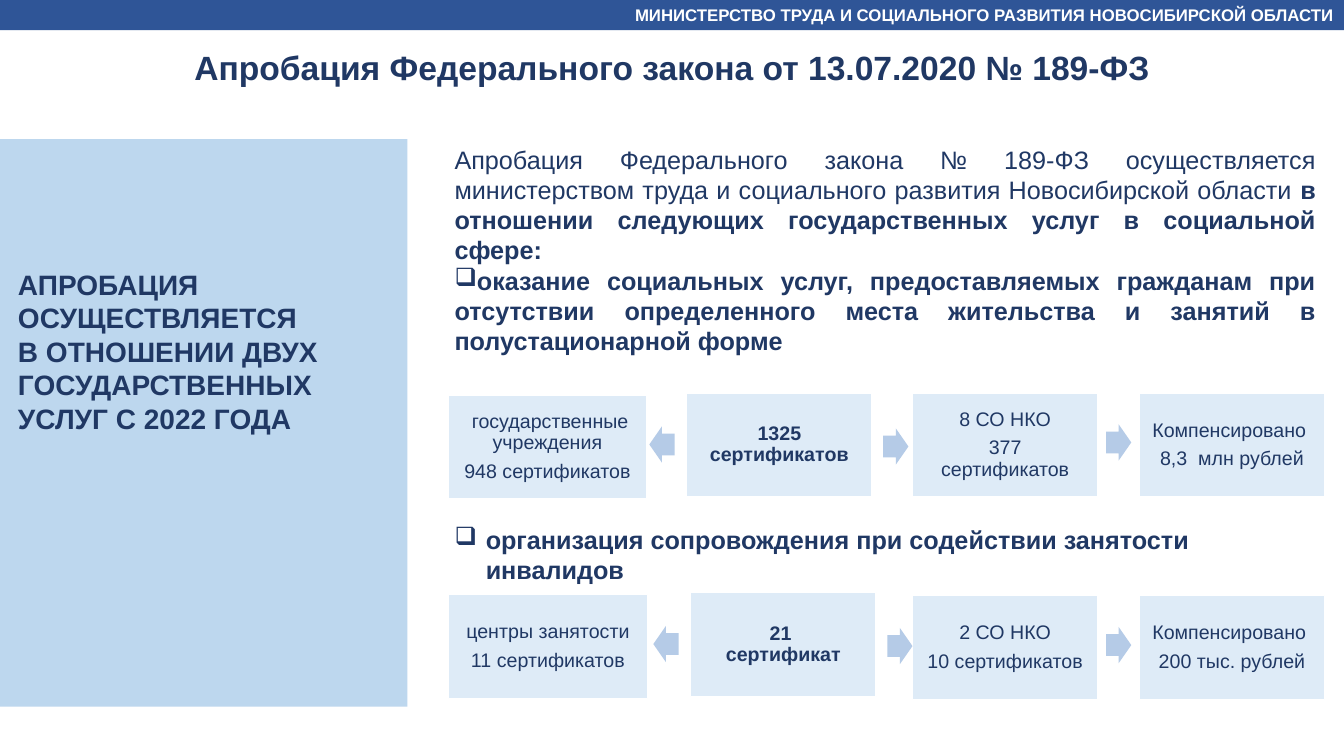
from dataclasses import dataclass

from lxml import etree
from pptx import Presentation
from pptx.dml.color import RGBColor
from pptx.enum.shapes import MSO_SHAPE
from pptx.enum.text import MSO_ANCHOR, MSO_AUTO_SIZE, PP_ALIGN
from pptx.oxml.ns import qn
from pptx.util import Inches, Pt

RECT = MSO_SHAPE.RECTANGLE
RIGHT_ARROW = MSO_SHAPE.RIGHT_ARROW
LEFT_ARROW = MSO_SHAPE.LEFT_ARROW
LEFT, CENTER, RIGHT, JUSTIFY = PP_ALIGN.LEFT, PP_ALIGN.CENTER, PP_ALIGN.RIGHT, PP_ALIGN.JUSTIFY
TOP, MIDDLE = MSO_ANCHOR.TOP, MSO_ANCHOR.MIDDLE
NO_AUTOFIT = MSO_AUTO_SIZE.NONE


@dataclass(frozen=True)
class Theme:
    font: str = "Arial"
    navy: str = "203864"
    header: str = "2F5597"
    panel: str = "BDD7EE"
    card: str = "DEEBF7"
    arrow: str = "B5CBE7"
    white: str = "FFFFFF"
    title_size: int = 24
    panel_size: int = 20
    body_size: int = 18
    card_size: int = 14
    header_size: int = 12


@dataclass(frozen=True)
class Box:
    left: float
    top: float
    width: float
    height: float

    def emu(self) -> tuple:
        return tuple(Inches(v) for v in (self.left, self.top, self.width, self.height))


@dataclass(frozen=True)
class Card:
    left: float
    top: float
    lines: tuple[str, ...]
    width: float = 1.84
    bold: bool = False
    gap: int = 5


@dataclass(frozen=True)
class Arrow:
    left: float
    top: float
    kind: MSO_SHAPE = RIGHT_ARROW


THEME = Theme()
CARD_HEIGHT = 1.03
CARD_INSET = Inches(0.12)
BULLET_INDENT = 0.31

CARDS = (
    Card(4.45, 3.92, (" государственные учреждения", "948 сертификатов"), width=1.96),
    Card(6.81, 3.9, ("1325 сертификатов",), bold=True),
    Card(9.05, 3.9, ("8 СО НКО", "377 сертификатов")),
    Card(11.3, 3.9, ("Компенсировано ", "8,3  млн рублей")),
    Card(4.45, 5.9, ("центры занятости", "11 сертификатов"), width=1.97),
    Card(6.85, 5.88, ("21 ", "сертификат"), bold=True, gap=0),
    Card(9.05, 5.91, ("2 СО НКО", "10 сертификатов")),
    Card(11.3, 5.91, ("Компенсировано ", "200 тыс. рублей")),
)
ARROWS = (
    Arrow(6.44, 4.23, LEFT_ARROW), Arrow(8.76, 4.25), Arrow(10.97, 4.21),
    Arrow(6.48, 6.21, LEFT_ARROW), Arrow(8.8, 6.23), Arrow(10.97, 6.22),
)


def add_block(slide, kind: MSO_SHAPE, box: Box, fill: str):
    sp = slide.shapes.add_shape(kind, *box.emu())
    sp.shadow.inherit = False
    sp.fill.solid()
    sp.fill.fore_color.rgb = RGBColor.from_string(fill)
    sp.line.fill.background()
    return sp


def add_text_box(slide, box: Box):
    tf = slide.shapes.add_textbox(*box.emu()).text_frame
    tf.word_wrap = True
    return tf


def style(p, size: int, bold: bool = False, align: PP_ALIGN = LEFT,
          color: str = THEME.navy) -> None:
    p.alignment = align
    p.font.name = THEME.font
    p.font.size = Pt(size)
    p.font.bold = bold
    p.font.color.rgb = RGBColor.from_string(color)


def write(tf, lines: tuple[str, ...], size: int, **look) -> None:
    """Fill the frame with one paragraph for each line, all styled alike."""
    tf.text = "\n".join(lines)
    for p in tf.paragraphs:
        style(p, size, **look)


def add_bullet(p, margin: float) -> None:
    """Give the paragraph a box bullet that hangs from the left margin."""
    props = p._p.get_or_add_pPr()
    props.set("marL", str(Inches(margin)))
    props.set("indent", str(-Inches(BULLET_INDENT)))
    bullet = etree.Element(qn("a:buChar"), char="❑")
    props.insert_element_before(bullet, "a:tabLst", "a:defRPr", "a:extLst")


def add_title(slide) -> None:
    sp = slide.shapes.title
    sp.left, sp.top, sp.width, sp.height = Box(0, 0.42, 13.33, 0.5).emu()
    tf = sp.text_frame
    tf.auto_size = NO_AUTOFIT
    tf.vertical_anchor = TOP
    write(tf, ("Апробация Федерального закона от 13.07.2020 № 189-ФЗ",),
          THEME.title_size, bold=True, align=CENTER)


def add_header(slide) -> None:
    tf = add_block(slide, RECT, Box(0, 0, 13.33, 0.3), THEME.header).text_frame
    tf.vertical_anchor = TOP
    write(tf, ("МИНИСТЕРСТВО ТРУДА И СОЦИАЛЬНОГО РАЗВИТИЯ НОВОСИБИРСКОЙ ОБЛАСТИ",),
          THEME.header_size, bold=True, align=RIGHT, color=THEME.white)


def add_side_panel(slide) -> None:
    add_block(slide, RECT, Box(0, 1.38, 4.04, 5.63), THEME.panel)
    tf = add_text_box(slide, Box(0.08, 2.6, 3.31, 1.78))
    write(tf, ("АПРОБАЦИЯ ОСУЩЕСТВЛЯЕТСЯ",
               "В ОТНОШЕНИИ ДВУХ ГОСУДАРСТВЕННЫХ УСЛУГ С 2022 ГОДА"),
          THEME.panel_size, bold=True)


def add_services(slide) -> None:
    tf = add_text_box(slide, Box(4.41, 1.38, 8.74, 2.22))
    p = tf.paragraphs[0]
    style(p, THEME.body_size, align=JUSTIFY)
    p.add_run().text = ("Апробация Федерального закона № 189-ФЗ осуществляется министерством "
                        "труда и социального развития Новосибирской области ")
    r = p.add_run()
    r.text = "в отношении следующих государственных услуг в социальной сфере:"
    r.font.bold = True

    p = tf.add_paragraph()
    p.text = ("оказание социальных услуг, предоставляемых гражданам при отсутствии "
              "определенного места жительства и занятий в полустационарной форме")
    style(p, THEME.body_size, bold=True, align=JUSTIFY)
    add_bullet(p, 0)

    tf = add_text_box(slide, Box(4.41, 5.15, 8.66, 0.71))
    write(tf, ("организация сопровождения при содействии занятости инвалидов",),
          THEME.body_size, bold=True)
    add_bullet(tf.paragraphs[0], BULLET_INDENT)


def add_card(slide, card: Card) -> None:
    sp = add_block(slide, RECT, Box(card.left, card.top, card.width, CARD_HEIGHT), THEME.card)
    sp.line.color.rgb = RGBColor.from_string(THEME.white)
    sp.line.width = Pt(1)
    tf = sp.text_frame
    tf.vertical_anchor = MIDDLE
    tf.margin_left = tf.margin_right = tf.margin_top = tf.margin_bottom = CARD_INSET
    write(tf, card.lines, THEME.card_size, bold=card.bold, align=CENTER)
    for p in tf.paragraphs:
        p.line_spacing = 0.9
        p.space_after = Pt(card.gap)


def add_arrow(slide, arrow: Arrow) -> None:
    sp = add_block(slide, arrow.kind, Box(arrow.left, arrow.top, 0.25, 0.36), THEME.arrow)
    sp.adjustments[0] = 0.6
    sp.adjustments[1] = 0.5


def main() -> None:
    prs = Presentation()
    prs.slide_width, prs.slide_height = Inches(13.33), Inches(7.5)
    slide = prs.slides.add_slide(prs.slide_layouts[5])
    add_title(slide)
    add_header(slide)
    add_side_panel(slide)
    add_services(slide)
    for card in CARDS:
        add_card(slide, card)
    for arrow in ARROWS:
        add_arrow(slide, arrow)
    prs.save("out.pptx")


if __name__ == "__main__":
    main()
